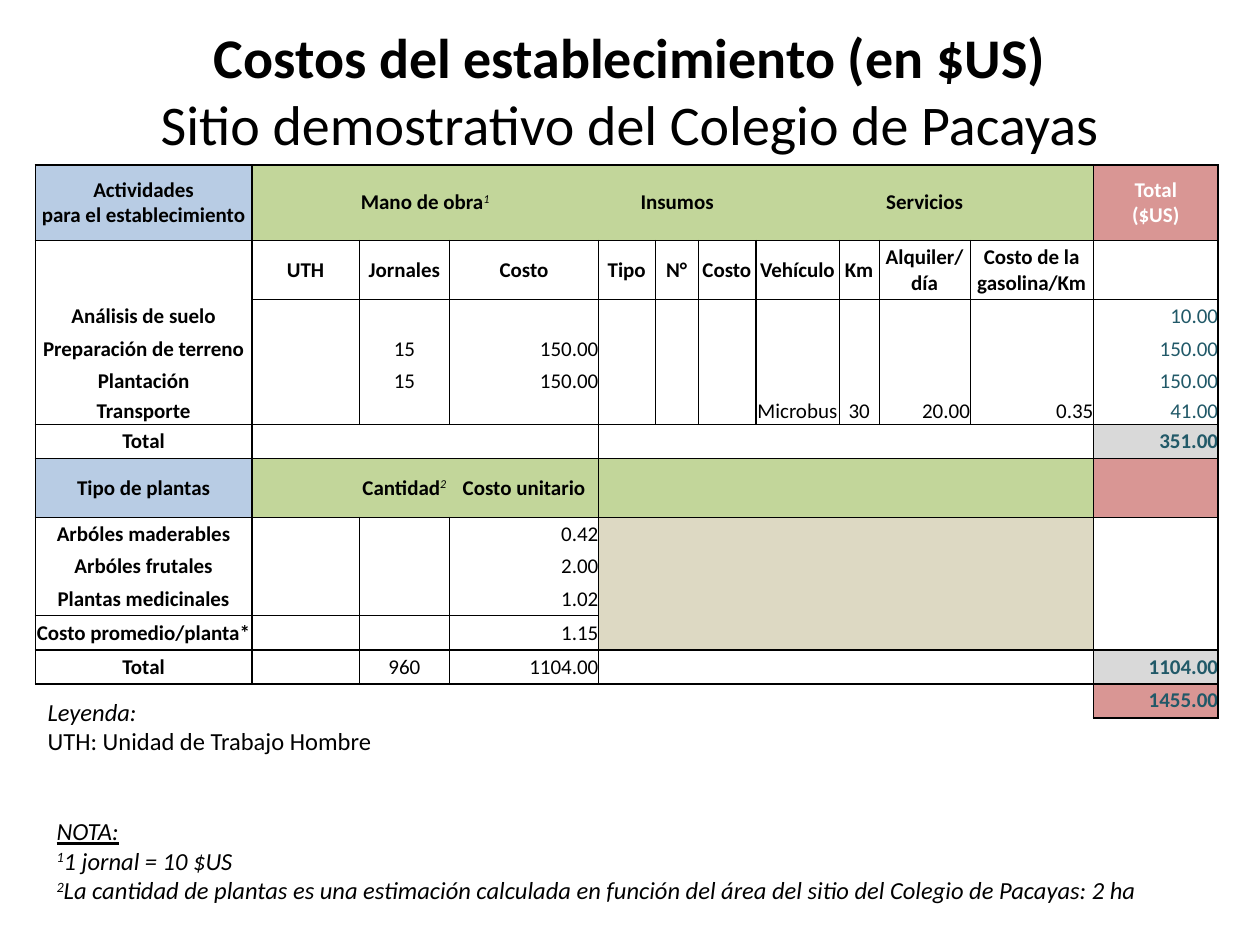
from lxml import etree
from pptx import Presentation
from pptx.dml.color import RGBColor
from pptx.enum.shapes import MSO_SHAPE
from pptx.enum.text import MSO_ANCHOR, PP_ALIGN
from pptx.oxml.ns import qn
from pptx.util import Inches, Pt

LEFT, CENTER, RIGHT = PP_ALIGN.LEFT, PP_ALIGN.CENTER, PP_ALIGN.RIGHT
TOP, MIDDLE = MSO_ANCHOR.TOP, MSO_ANCHOR.MIDDLE
RECTANGLE = MSO_SHAPE.RECTANGLE
FONT = "Calibri"
COLORS = {"text": "000000", "white": "FFFFFF", "teal": "215968", "blue": "B8CCE4",
          "green": "C2D69A", "red": "D99694", "gray": "D9D9D9", "sand": "DDD9C3"}

TITLE = ("Costos del establecimiento (en $US)", "Sitio demostrativo del Colegio de Pacayas")
LEGEND = [[("Leyenda:", "i")], [("UTH: Unidad de Trabajo Hombre", "")]]
NOTES = [
    [("NOTA:", "iu")],
    [("1", "is"), ("1 jornal = 10 $US", "i")],
    [("2", "is"), ("La cantidad de plantas es una estimación calculada en función "
                   "del área del sitio del Colegio de Pacayas: 2 ha", "i")],
]

COLUMN_WIDTHS = [1.72, 0.85, 0.72, 1.18, 0.45, 0.34, 0.46, 0.66, 0.32, 0.72, 0.98, 0.99]
ROW_HEIGHTS = [0.6, 0.47, 0.26, 0.26, 0.26, 0.21, 0.27, 0.47, 0.26, 0.26, 0.26, 0.27, 0.27, 0.27]
ROWS = [
    {0: "Actividades\npara el establecimiento", 1: "Mano de obra^1", 4: "Insumos",
     9: "Servicios", 11: "Total\n($US)"},
    {1: "UTH", 2: "Jornales", 3: "Costo", 4: "Tipo", 5: "N°", 6: "Costo", 7: "Vehículo",
     8: "Km", 9: "Alquiler/\ndía", 10: "Costo de la gasolina/Km"},
    {0: "Análisis de suelo", 11: "10.00"},
    {0: "Preparación de terreno", 2: "15", 3: "150.00", 11: "150.00"},
    {0: "Plantación", 2: "15", 3: "150.00", 11: "150.00"},
    {0: "Transporte", 7: "Microbus", 8: "30", 9: "20.00", 10: "0.35", 11: "41.00"},
    {0: "Total", 11: "351.00"},
    {0: "Tipo de plantas", 2: "Cantidad^2", 3: "Costo unitario"},
    {0: "Arbóles maderables", 3: "0.42"},
    {0: "Arbóles frutales", 3: "2.00"},
    {0: "Plantas medicinales", 3: "1.02"},
    {0: "Costo promedio/planta*", 3: "1.15"},
    {0: "Total", 2: "960", 3: "1104.00", 11: "1104.00"},
    {11: "1455.00"},
]
HEADER_ROWS, BOLD_ROWS, BOLD_TOTALS = (0, 7), (0, 1, 7), (6, 12, 13)
MERGES = [(0, 1, 3), (0, 4, 6)]

# rows, thick vertical edges, thin vertical edges
VERTICAL_EDGES = [
    (range(0, 1), (0, 1, 11, 12), ()),
    (range(1, 6), (0, 1, 4, 7, 11, 12), (2, 3, 5, 6, 8, 9, 10)),
    (range(6, 8), (0, 1, 4, 11, 12), ()),
    (range(8, 13), (0, 1, 11, 12), (2, 3, 4)),
    (range(13, 14), (11, 12), ()),
]
# edge, first column, end column, points
HORIZONTAL_EDGES = [(edge, 0, 12, 1) for edge in (0, 1, 6, 8, 12, 13)] + [
    (2, 1, 12, 0.5), (7, 0, 1, 1), (7, 1, 4, 0.5), (7, 4, 12, 1), (11, 0, 4, 0.5), (14, 11, 12, 1)]


def rgb(name):
    return RGBColor.from_string(COLORS[name])


def style_paragraph(paragraph, size, color="text", bold=False, align=LEFT):
    paragraph.alignment = align
    font = paragraph.font
    font.name, font.size, font.bold = FONT, Pt(size), bold
    font.color.rgb = rgb(color)


def add_run(paragraph, text, style=""):
    run = paragraph.add_run()
    run.text = text
    if "i" in style:
        run.font.italic = True
    if "u" in style:
        run.font.underline = True
    if "s" in style:
        run._r.get_or_add_rPr().set("baseline", "30000")
    return run


def fill_text(frame, lines):
    for index, runs in enumerate(lines):
        paragraph = frame.add_paragraph() if index else frame.paragraphs[0]
        style_paragraph(paragraph, 14)
        for text, style in runs:
            add_run(paragraph, text, style)


def cell_fill(row, column):
    if column == 11:
        return {0: "red", 6: "gray", 7: "red", 12: "gray", 13: "red"}.get(row)
    if row in HEADER_ROWS:
        return "green" if column else "blue"
    return "sand" if 8 <= row <= 11 and column >= 4 else None


def set_borders(cell, widths):
    properties = cell._tc.get_or_add_tcPr()
    for index, (side, width) in enumerate(zip("LRTB", widths)):
        line = etree.Element(qn(f"a:ln{side}"), w=str(Pt(width)))
        if width:
            solid = etree.SubElement(line, qn("a:solidFill"))
            etree.SubElement(solid, qn("a:srgbClr"), val=COLORS["text"])
        else:
            etree.SubElement(line, qn("a:noFill"))
        properties.insert(index, line)


def write_cell(cell, row, column):
    text = ROWS[row].get(column, "")
    color = "text" if column < 11 else "teal" if row else "white"
    bold = column == 0 or row in BOLD_ROWS or (column == 11 and row in BOLD_TOTALS)
    frame = cell.text_frame
    for index, line in enumerate(text.split("\n")):
        paragraph = frame.add_paragraph() if index else frame.paragraphs[0]
        style_paragraph(paragraph, 12, color, bold, RIGHT if "." in line else CENTER)
        main, _, mark = line.partition("^")
        if main:
            add_run(paragraph, main)
        else:
            etree.SubElement(paragraph._p, qn("a:endParaRPr"), sz="1200")
        if mark:
            add_run(paragraph, mark, "is").font.bold = False


def add_cost_table(slide):
    frame = slide.shapes.add_table(len(ROW_HEIGHTS), len(COLUMN_WIDTHS), Inches(0.28), Inches(1.31),
                                   Inches(sum(COLUMN_WIDTHS)), Inches(sum(ROW_HEIGHTS)))
    table = frame.table
    table.first_row = table.horz_banding = False
    for column, width in zip(table.columns, COLUMN_WIDTHS):
        column.width = Inches(width)
    for row, height in zip(table.rows, ROW_HEIGHTS):
        row.height = Inches(height)
    vertical = {(row, edge): points for rows, thick, thin in VERTICAL_EDGES for row in rows
                for edges, points in ((thick, 1), (thin, 0.5)) for edge in edges}
    horizontal = {(edge, column): points for edge, first, end, points in HORIZONTAL_EDGES
                  for column in range(first, end)}
    for row in range(len(ROW_HEIGHTS)):
        for column in range(len(COLUMN_WIDTHS)):
            cell = table.cell(row, column)
            cell.margin_left = cell.margin_right = cell.margin_top = cell.margin_bottom = 0
            cell.vertical_anchor = MIDDLE
            fill = cell_fill(row, column)
            if fill:
                cell.fill.solid()
                cell.fill.fore_color.rgb = rgb(fill)
            else:
                cell.fill.background()
            set_borders(cell, (vertical.get((row, column), 0), vertical.get((row, column + 1), 0),
                               horizontal.get((row, column), 0), horizontal.get((row + 1, column), 0)))
            write_cell(cell, row, column)
    for row, first, last in MERGES:
        table.cell(row, first).merge(table.cell(row, last))


def main():
    presentation = Presentation()
    presentation.slide_width, presentation.slide_height = Inches(10), Inches(7.5)
    slide = presentation.slides.add_slide(presentation.slide_layouts[6])
    add_cost_table(slide)

    legend = slide.shapes.add_textbox(Inches(0.28), Inches(5.48), Inches(2.8), Inches(0.57))
    fill_text(legend.text_frame, LEGEND)

    notes = slide.shapes.add_shape(RECTANGLE, Inches(0.35), Inches(6.43), Inches(9.29), Inches(0.87))
    notes.shadow.inherit = False
    notes.fill.solid()
    notes.fill.fore_color.rgb = rgb("white")
    notes.line.fill.background()
    notes.text_frame.vertical_anchor = TOP
    fill_text(notes.text_frame, NOTES)

    title = slide.shapes.add_textbox(Inches(0.75), Inches(0.13), Inches(8.5), Inches(0.79))
    title.text_frame.word_wrap = True
    paragraph = title.text_frame.paragraphs[0]
    style_paragraph(paragraph, 32, align=CENTER)
    add_run(paragraph, TITLE[0]).font.bold = True
    paragraph.add_line_break()
    add_run(paragraph, TITLE[1])
    presentation.save("out.pptx")


if __name__ == "__main__":
    main()
